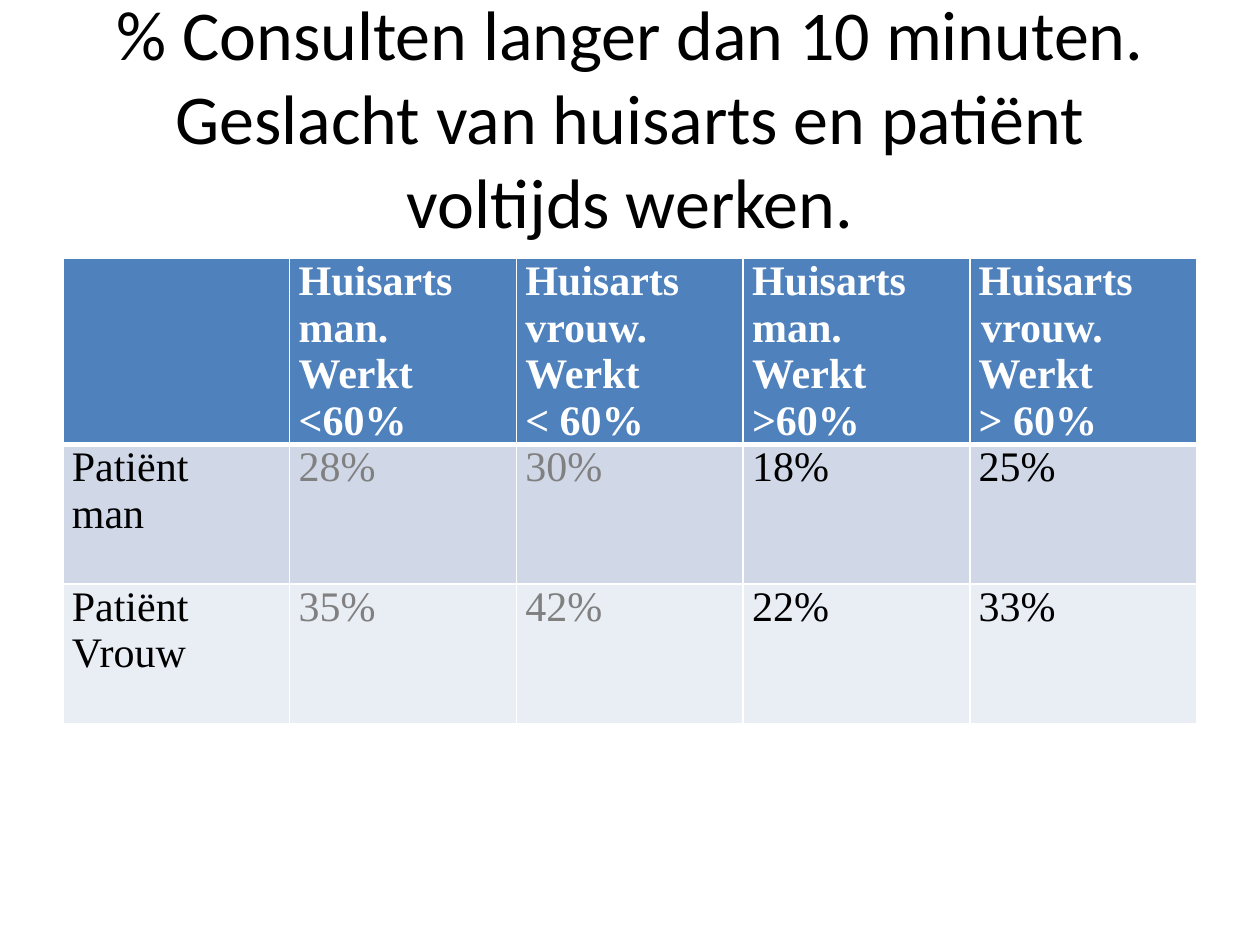
"""Builds a slide comparing long consultations by gender and working hours."""
from lxml import etree
from pptx import Presentation
from pptx.dml.color import RGBColor
from pptx.enum.text import MSO_ANCHOR, MSO_AUTO_SIZE, PP_ALIGN
from pptx.oxml.ns import qn
from pptx.util import Cm, Pt

CENTER, LEFT = PP_ALIGN.CENTER, PP_ALIGN.LEFT
MIDDLE, TOP = MSO_ANCHOR.MIDDLE, MSO_ANCHOR.TOP
NO_AUTOFIT = MSO_AUTO_SIZE.NONE
TITLE_ONLY = 5

COLORS = {
    "black": "000000",
    "white": "FFFFFF",
    "gray": "808080",
    "header": "4F81BD",
    "man": "D0D8E8",
    "woman": "E9EDF4",
}

TITLE = "% Consulten langer dan 10 minuten.\vGeslacht van huisarts en patiënt voltijds werken."
ROWS = [
    ["", "Huisarts man.\nWerkt <60%", "Huisarts vrouw.\nWerkt\n< 60%",
     "Huisarts man.\nWerkt >60%", "Huisarts vrouw.\nWerkt\n> 60%"],
    ["Patiënt\nman", "28%", "30%", "18%", "25%"],
    ["Patiënt Vrouw", "35%", "42%", "22%", "33%"],
]
FILLS = ["header", "man", "woman"]
PART_TIME_COLUMNS = (1, 2)
HANGING_CELL = (0, 4)


def write_text(frame, text, font, size, color="black", bold=False, align=LEFT, hanging=0):
    frame.text = text
    for paragraph in frame.paragraphs:
        paragraph.alignment = align
        if hanging:
            properties = paragraph._p.get_or_add_pPr()
            properties.set("marL", str(hanging))
            properties.set("indent", str(-hanging))
        for run in paragraph.runs:
            run.font.name = font
            run.font.size = Pt(size)
            run.font.bold = bold
            run.font.color.rgb = RGBColor.from_string(COLORS[color])


class SlideBuilder:
    def __init__(self, presentation, title_font, table_font):
        self.slide = presentation.slides.add_slide(presentation.slide_layouts[TITLE_ONLY])
        self.title_font = title_font
        self.table_font = table_font

    def title(self, text, left, top, width, height):
        shape = self.slide.shapes.title
        shape.left, shape.top, shape.width, shape.height = left, top, width, height
        frame = shape.text_frame
        frame.word_wrap = True
        frame.auto_size = NO_AUTOFIT
        frame.vertical_anchor = MIDDLE
        write_text(frame, text, self.title_font, 40, align=CENTER)

    def table(self, rows, left, top, column_width, row_height):
        row_count, column_count = len(rows), len(rows[0])
        table = self.slide.shapes.add_table(
            row_count, column_count, left, top,
            column_width * column_count, row_height * row_count).table
        for column in table.columns:
            column.width = column_width
        for row in table.rows:
            row.height = row_height
        for row_index, texts in enumerate(rows):
            for column_index, text in enumerate(texts):
                self.cell(table.cell(row_index, column_index), text, row_index, column_index)

    def cell(self, cell, text, row_index, column_index):
        is_header = row_index == 0
        color = "black"
        if is_header:
            color = "white"
        elif column_index in PART_TIME_COLUMNS:
            color = "gray"
        cell.margin_left = cell.margin_right = Cm(0.18)
        cell.margin_top = cell.margin_bottom = 0
        cell.vertical_anchor = TOP
        cell.fill.solid()
        cell.fill.fore_color.rgb = RGBColor.from_string(COLORS[FILLS[row_index]])
        hanging = Cm(0.05) if (row_index, column_index) == HANGING_CELL else 0
        write_text(cell.text_frame, text, self.table_font, 24, color, is_header, hanging=hanging)
        self.borders(cell, top=3 if row_index == 1 else 1, bottom=3 if is_header else 1)

    def borders(self, cell, top, bottom):
        properties = cell._tc.get_or_add_tcPr()
        sides = {"a:lnL": 1, "a:lnR": 1, "a:lnT": top, "a:lnB": bottom}
        for position, (tag, width) in enumerate(sides.items()):
            line = etree.Element(qn(tag), w=str(Pt(width)))
            fill = etree.SubElement(line, qn("a:solidFill"))
            etree.SubElement(fill, qn("a:srgbClr"), val=COLORS["white"])
            properties.insert(position, line)


def main():
    presentation = Presentation()
    presentation.slide_width, presentation.slide_height = Cm(25.4), Cm(19.05)
    builder = SlideBuilder(presentation, "Calibri", "Times New Roman")
    builder.title(TITLE, Cm(1.27), Cm(0.76), Cm(22.86), Cm(3.18))
    builder.table(ROWS, Cm(1.27), Cm(5.21), Cm(4.57), Cm(2.82))
    presentation.save("out.pptx")


if __name__ == "__main__":
    main()
